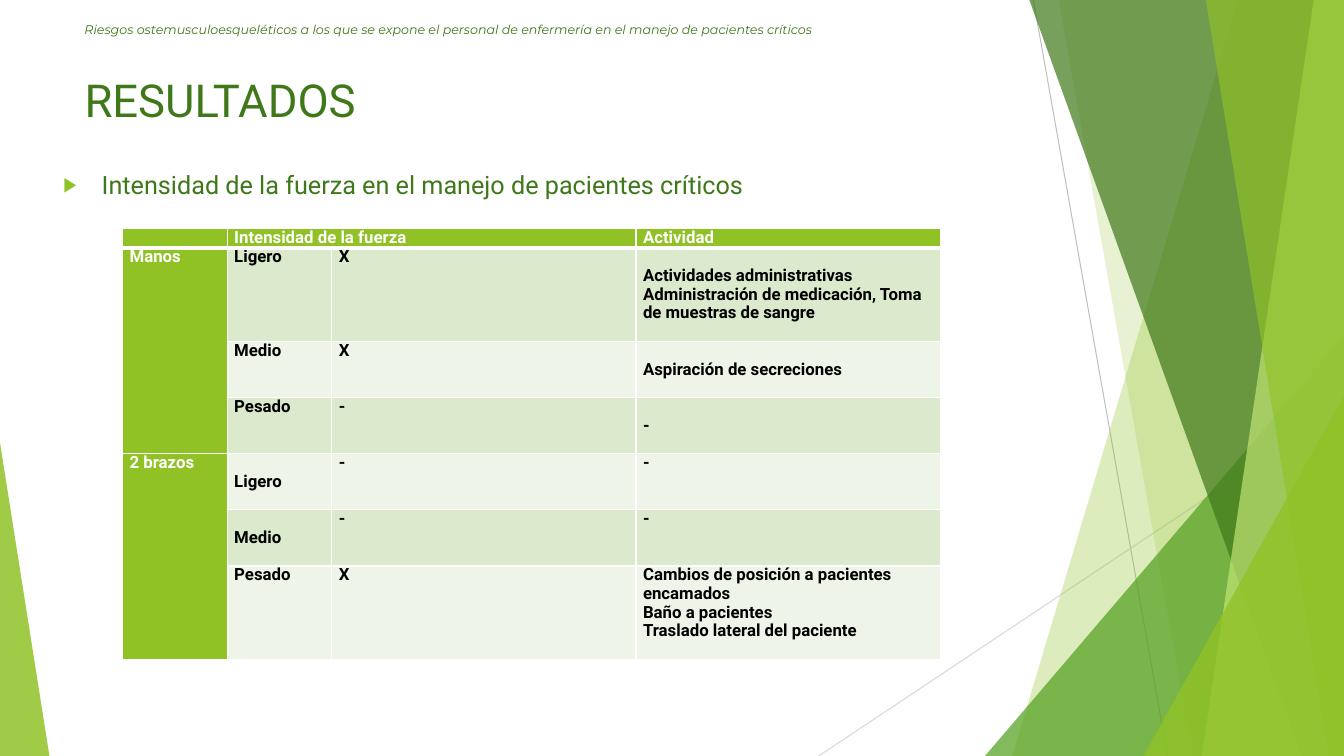
from lxml.etree import SubElement as Sub
from pptx import Presentation
from pptx.dml.color import RGBColor as Rgb
from pptx.enum.shapes import MSO_CONNECTOR as Link, MSO_SHAPE as Form
from pptx.enum.text import MSO_ANCHOR as Anchor
from pptx.oxml.ns import qn
from pptx.util import Inches, Pt

WIDE, HIGH = 13.33, 7.5
INK = {"lime": "90C226", "leaf": "54A021", "dark": "3F7819", "pale": "C0E474",
       "gray": "BFBFBF", "mist": "D9D9D9", "white": "FFFFFF", "black": "000000",
       "odd": "DBE9CD", "even": "EEF4E8"}

# Decoration, in percent of its box
LINES = [(76.89, 0, 86.87, 100, "gray"), (100, 53.73, 60.92, 100, "mist")]
# band: top x, bottom x; peak: left, top, width, apex share
SHEETS = [("band", (92.12, 75.32), "lime", 30),
          ("band", (78.77, 88.75), "lime", 20),
          ("peak", (73.29, 44.4, 26.71, 1), "leaf", 72),
          ("band", (76.59, 96.85), "dark", 70),
          ("band", (97.75, 89.42), "pale", 70),
          ("band", (89.72, 98.87), "lime", 65),
          ("peak", (85.07, 52.4, 14.93, 1), "lime", 80),
          ("peak", (0, 58.53, 3.68, 0), "lime", 85)]

COLS = [12.8, 12.8, 37.2, 37.2]  # percent of the table width
ROWS = [1, 5, 3, 3, 3, 3, 5]  # text lines
CELLS = [
    ["", "Intensidad de la fuerza", "", "Actividad"],
    ["Manos", "Ligero", "X", "Actividades administrativas Administración de "
                             "medicación, Toma de muestras de sangre"],
    ["", "Medio", "X", "Aspiración de secreciones"],
    ["", "Pesado", "-", "-"],
    ["2 brazos", "Ligero", "-", "-"],
    ["", "Medio", "-", "-"],
    ["", "Pesado", "X", "Cambios de posición a pacientes encamados\n"
                        "Baño a pacientes\nTraslado lateral del paciente"],
]
MERGES = [(0, 1, 0, 2), (1, 0, 3, 0), (4, 0, 6, 0)]
LOWER = {(1, 3), (2, 3), (3, 3), (4, 1), (5, 1)}  # text starts one line down


def part(box, x, y, w, h):
    """Box inside a box, given in percent."""
    left, top, wide, high = box
    return (left + wide * x / 100, top + high * y / 100,
            wide * w / 100, high * h / 100)


def emu(box):
    return [Inches(n) for n in box]


def point(box, x, y):
    return emu(part(box, x, y, 0, 0)[:2])


def style(para, name, size, color, bold=False, slant=False):
    for run in para.runs:
        font = run.font
        font.name, font.size = name, Pt(size)
        font.bold, font.italic = bold, slant
        font.color.rgb = Rgb.from_string(INK[color])


def paint(shape, color, alpha):
    shape.shadow.inherit = False
    shape.line.fill.background()
    shape.fill.solid()
    shape.fill.fore_color.rgb = Rgb.from_string(INK[color])
    tint = shape.fill._xPr.find(".//" + qn("a:srgbClr"))
    Sub(tint, qn("a:alpha"), val=str(alpha * 1000))


def deco(slide, box):
    # Thin lines
    for x, y, far, low, color in LINES:
        line = slide.shapes.add_connector(
            Link.STRAIGHT, *point(box, x, y), *point(box, far, low))
        line.line.width = Pt(0.75)
        line.line.color.rgb = Rgb.from_string(INK[color])
        Sub(line._element.spPr, qn("a:effectLst"))
    # Translucent sheets
    for kind, dims, color, alpha in SHEETS:
        if kind == "band":
            top, low = dims
            path = slide.shapes.build_freeform(*point(box, top, 0))
            path.add_line_segments([point(box, 100, 0), point(box, 100, 100),
                                    point(box, low, 100)])
            shape = path.convert_to_shape()
        else:
            x, y, w, apex = dims
            shape = slide.shapes.add_shape(
                Form.ISOSCELES_TRIANGLE, *emu(part(box, x, y, w, 100 - y)))
            shape.adjustments[0] = apex
        paint(shape, color, alpha)


def label(slide, box, text, name, size, slant=False, anchor=Anchor.TOP):
    frame = slide.shapes.add_textbox(*emu(box)).text_frame
    frame.word_wrap = True
    frame.vertical_anchor = anchor
    frame.text = text
    para = frame.paragraphs[0]
    style(para, name, size, "dark", slant=slant)
    return para


def bullet(para):
    props = para._p.get_or_add_pPr()
    props.set("marL", str(Inches(0.38)))
    props.set("indent", str(-Inches(0.38)))
    Sub(Sub(props, qn("a:buClr")), qn("a:srgbClr"), val=INK["lime"])
    Sub(props, qn("a:buSzPct"), val="80000")
    Sub(props, qn("a:buFont"), typeface="Roboto")
    Sub(props, qn("a:buChar"), char="▶")


def heads(slide, box):
    label(slide, part(box, 5.55, 1.2, 67.37, 5.33),
          "Riesgos ostemusculoesqueléticos a los que se expone el personal de "
          "enfermería en el manejo de pacientes críticos",
          "Montserrat", 9, True, Anchor.MIDDLE)
    label(slide, part(box, 5.55, 8.93, 70.52, 9.6), "RESULTADOS", "Roboto", 32.4)
    bullet(label(slide, part(box, 3.98, 21.73, 70.52, 8.67),
                 "Intensidad de la fuerza en el manejo de pacientes críticos",
                 "Roboto", 18))


def edge(cell, row):
    """White cell borders, thick under the header."""
    props = cell._tc.get_or_add_tcPr()
    thick = {(0, "lnB"), (1, "lnT")}
    for spot, tag in enumerate(("lnL", "lnR", "lnT", "lnB")):
        width = 3 if (row, tag) in thick else 1
        line = props.makeelement(qn("a:" + tag), {"w": str(Pt(width))})
        Sub(Sub(line, qn("a:solidFill")), qn("a:srgbClr"), val=INK["white"])
        props.insert(spot, line)


def grid(slide, box):
    table = slide.shapes.add_table(len(ROWS), len(COLS), *emu(box)).table
    step = box[3] / sum(ROWS)
    for col, share in zip(table.columns, COLS):
        col.width = Inches(box[2] * share / 100)
    for row, lines in zip(table.rows, ROWS):
        row.height = Inches(step * lines)
    for r, texts in enumerate(CELLS):
        for c, text in enumerate(texts):
            cell = table.cell(r, c)
            head = r == 0 or c == 0
            cell.margin_left = cell.margin_right = Inches(0.07)
            cell.margin_top = Inches(step if (r, c) in LOWER else 0)
            cell.margin_bottom = 0
            cell.text_frame.text = text
            for para in cell.text_frame.paragraphs:
                para.line_spacing = 0.95
                style(para, "Roboto", 12, "white" if head else "black", bold=True)
                if not text:  # keeps empty cells low
                    Sub(para._p, qn("a:endParaRPr"), sz="1000")
            cell.fill.solid()
            tone = "lime" if head else "odd" if r % 2 else "even"
            cell.fill.fore_color.rgb = Rgb.from_string(INK[tone])
            edge(cell, r)
    for top, left, low, right in MERGES:
        table.cell(top, left).merge(table.cell(low, right))


def main():
    deck = Presentation()
    deck.slide_width, deck.slide_height = Inches(WIDE), Inches(HIGH)
    slide = deck.slides.add_slide(deck.slide_layouts[6])
    page = (0, 0, WIDE, HIGH)
    deco(slide, page)
    heads(slide, page)
    grid(slide, part(page, 9.12, 30.25, 60.84, 56.93))
    deck.save("out.pptx")


if __name__ == "__main__":
    main()
